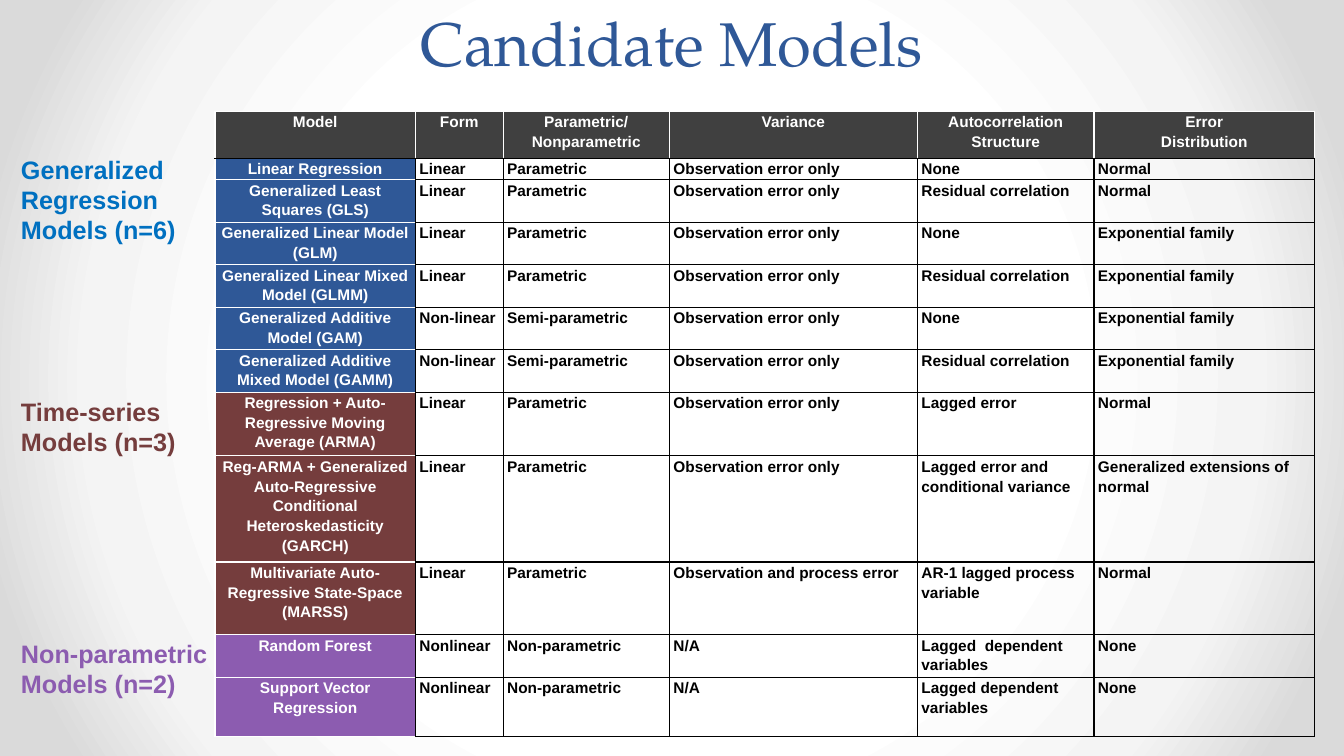
from lxml.etree import SubElement
from pptx import Presentation
from pptx.dml.color import RGBColor
from pptx.enum.text import MSO_ANCHOR as Anchor, PP_ALIGN as Align
from pptx.oxml import parse_xml
from pptx.oxml.ns import nsdecls, qn
from pptx.util import Cm, Pt

BLUE, BROWN, PURPLE = "2F5897", "753D3D", "8C5CB0"
WHITE, BLACK, CHARCOAL = "FFFFFF", "000000", "404040"
BACKDROP = [(50, WHITE), (76, "F4F4F4"), (92, "DADADA")]

COLUMN_WIDTHS = [5.05, 2.21, 4.19, 6.25, 4.45, 5.56]
ROW_HEIGHTS = [1.19, 0.53] + [1.05] * 5 + [1.57, 2.62, 1.83, 0.99, 1.49]
HEADINGS = ["Model", "Form", "Parametric/ Nonparametric", "Variance",
            "Autocorrelation Structure", "Error\nDistribution"]

OBSERVATION = "Observation error only"
RESIDUAL = "Residual correlation"
EXPONENTIAL = "Exponential family"
REGRESSION_MODELS = [
    ("Linear Regression", "Linear", "Parametric", OBSERVATION, "None", "Normal"),
    ("Generalized Least Squares (GLS)", "Linear", "Parametric", OBSERVATION, RESIDUAL, "Normal"),
    ("Generalized Linear Model (GLM)", "Linear", "Parametric", OBSERVATION, "None", EXPONENTIAL),
    ("Generalized Linear Mixed Model (GLMM)", "Linear", "Parametric", OBSERVATION,
     RESIDUAL, EXPONENTIAL),
    ("Generalized Additive Model (GAM)", "Non-linear", "Semi-parametric", OBSERVATION,
     "None", EXPONENTIAL),
    ("Generalized Additive Mixed Model (GAMM)", "Non-linear", "Semi-parametric", OBSERVATION,
     RESIDUAL, EXPONENTIAL),
]
TIME_SERIES_MODELS = [
    ("Regression + Auto-Regressive Moving Average (ARMA)", "Linear", "Parametric",
     OBSERVATION, "Lagged error", "Normal"),
    ("Reg-ARMA + Generalized Auto-Regressive Conditional Heteroskedasticity (GARCH)",
     "Linear", "Parametric", OBSERVATION, "Lagged error and conditional variance",
     "Generalized extensions of normal"),
    ("Multivariate Auto-Regressive State-Space (MARSS)", "Linear", "Parametric",
     "Observation and process error", "AR-1 lagged process variable", "Normal"),
]
NONPARAMETRIC_MODELS = [
    ("Random Forest", "Nonlinear", "Non-parametric", "N/A",
     "Lagged  dependent variables", "None"),
    ("Support Vector Regression", "Nonlinear", "Non-parametric", "N/A",
     "Lagged dependent variables", "None"),
]
FAMILIES = [(BLUE, REGRESSION_MODELS), (BROWN, TIME_SERIES_MODELS),
            (PURPLE, NONPARAMETRIC_MODELS)]

# Each label: text, colour, line of the side column on which it starts
LABELS = [("Generalized\nRegression\nModels (n=6)", "0070C0", 0),
          ("Time-series\nModels (n=3)", BROWN, 8),
          ("Non-parametric\nModels (n=2)", PURPLE, 16)]
LABEL_LINE = Pt(21.6)


def rgb(color):
    return RGBColor.from_string(color)


def write(frame, text, color, size, name="Arial", bold=True, align=Align.LEFT, spacing=1.0):
    frame.text = text
    for paragraph in frame.paragraphs:
        paragraph.alignment = align
        paragraph.line_spacing = spacing
        for key, value in {"size": Pt(size), "name": name, "bold": bold}.items():
            setattr(paragraph.font, key, value)
        paragraph.font.color.rgb = rgb(color)


def paint_background(slide):
    """Radial gradient, lightest in the middle."""
    stops = "".join(f'<a:gs pos="{at * 1000}"><a:srgbClr val="{color}"/></a:gs>'
                    for at, color in BACKDROP)
    background = parse_xml(
        f'<p:bg {nsdecls("p", "a")}><p:bgPr><a:gradFill rotWithShape="1">'
        f'<a:gsLst>{stops}</a:gsLst><a:path path="circle">'
        '<a:fillToRect l="50000" t="50000" r="50000" b="50000"/></a:path>'
        '</a:gradFill><a:effectLst/></p:bgPr></p:bg>')
    slide.element.cSld.insert(0, background)


def add_title(slide, left, top, width, height):
    frame = slide.shapes.add_textbox(left, top, width, height).text_frame
    frame.word_wrap = True
    frame.vertical_anchor = Anchor.BOTTOM
    write(frame, "Candidate Models", BLUE, 44, "TeX Gyre Pagella", False,
          Align.CENTER, Pt(58))


def add_family_labels(slide, left, top, width):
    for text, color, line in LABELS:
        height = LABEL_LINE * len(text.split("\n")) + Cm(0.25)
        frame = slide.shapes.add_textbox(left, top + LABEL_LINE * line, width,
                                         height).text_frame
        frame.word_wrap = True
        write(frame, text, color, 18, spacing=LABEL_LINE)


def set_borders(cell, left, right, top, bottom):
    properties = cell._tc.get_or_add_tcPr()
    for side, color in zip("LRTB", (left, right, top, bottom)):
        line = SubElement(properties, qn(f"a:ln{side}"), w=str(Pt(1)))
        SubElement(SubElement(line, qn("a:solidFill")), qn("a:srgbClr"), val=color)


def fill_cell(cell, text, fill, borders):
    """Filled cells carry centred white text, the others black text."""
    margins = {"margin_left": Cm(0.1), "margin_right": Cm(0.1),
               "margin_top": 0, "margin_bottom": 0}
    for key, value in margins.items():
        setattr(cell, key, value)
    set_borders(cell, *borders)
    if fill:
        cell.fill.solid()
        cell.fill.fore_color.rgb = rgb(fill)
    else:
        cell.fill.background()
    write(cell.text_frame, text, WHITE if fill else BLACK, 11,
          align=Align.CENTER if fill else Align.LEFT, spacing=1.15)


def add_model_table(slide, left, top):
    table = slide.shapes.add_table(
        len(ROW_HEIGHTS), len(COLUMN_WIDTHS), left, top,
        Cm(sum(COLUMN_WIDTHS)), Cm(sum(ROW_HEIGHTS))).table
    table.horz_banding = False
    for column, width in zip(table.columns, COLUMN_WIDTHS):
        column.width = Cm(width)
    for row, height in zip(table.rows, ROW_HEIGHTS):
        row.height = Cm(height)

    for cell, heading in zip(table.rows[0].cells, HEADINGS):
        fill_cell(cell, heading, CHARCOAL, (WHITE, WHITE, WHITE, BLACK))
    models = [(color, model) for color, family in FAMILIES for model in family]
    for number, (color, model) in enumerate(models, 1):
        name_cell, *trait_cells = table.rows[number].cells
        above = BLACK if number == 1 else WHITE
        fill_cell(name_cell, model[0], color, (WHITE, BLACK, above, WHITE))
        for cell, trait in zip(trait_cells, model[1:]):
            fill_cell(cell, trait, None, [BLACK] * 4)


def main():
    deck = Presentation()
    deck.slide_width, deck.slide_height = Cm(33.87), Cm(19.05)
    slide = deck.slides.add_slide(deck.slide_layouts[6])
    paint_background(slide)
    add_title(slide, Cm(5.5), Cm(0), Cm(22.86), Cm(2.1))
    add_model_table(slide, Cm(5.42), Cm(2.8))
    add_family_labels(slide, Cm(0.28), Cm(3.76), Cm(5.36))
    deck.save("out.pptx")


if __name__ == "__main__":
    main()
